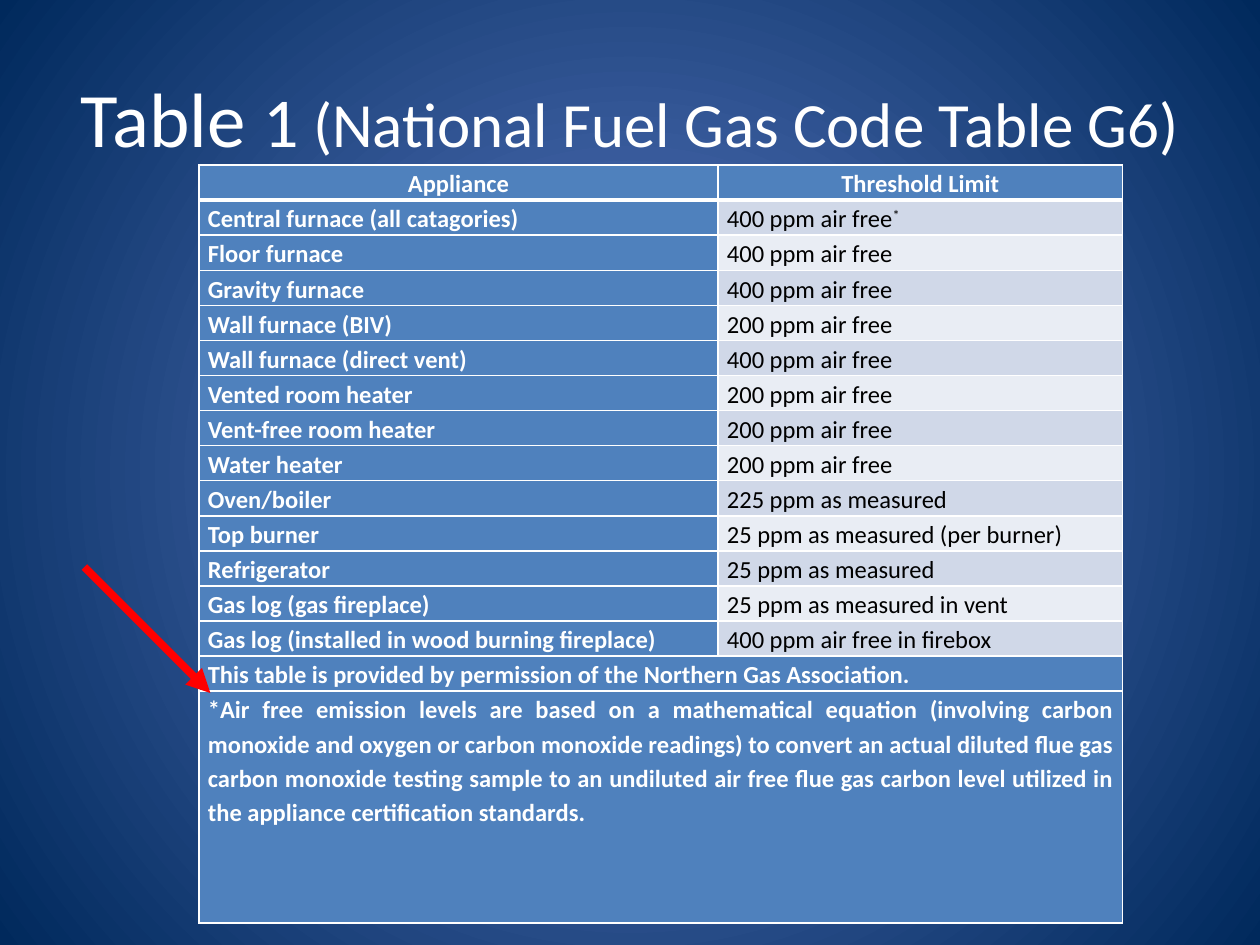
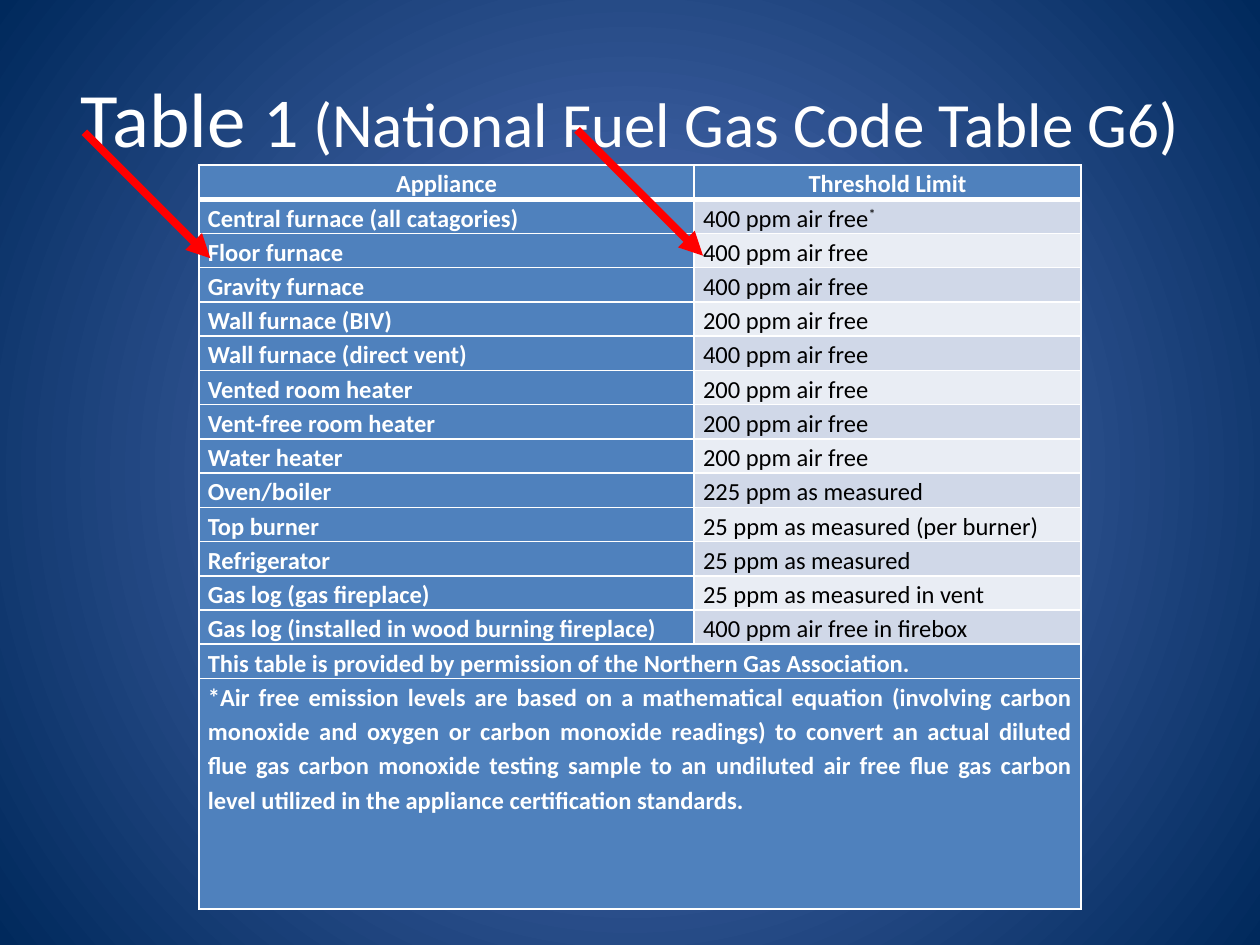
from dataclasses import dataclass

from lxml import etree
from pptx import Presentation
from pptx import util as u
from pptx.dml import color
from pptx.enum import shapes, text
from pptx.oxml import ns


@dataclass(frozen=True)
class Theme:
    font: str = "Calibri"
    white: str = "FFFFFF"
    black: str = "000000"
    glow: str = "5E7CC5"
    navy: str = "00295C"
    blue: str = "4F81BD"
    bands: tuple = ("D0D8E8", "E9EDF4")
    arrow: str = "FF0000"
    title_sizes: tuple = (44, 40, 36)
    table_size: int = 14
    arrow_width: float = 4.5
    border: int = 1
    header_border: int = 3


THEME = Theme()
ALIGN = text.PP_ALIGN
TITLE = ("Table ", "1", " (National Fuel Gas Code Table G6)")
HEADINGS = ("Appliance", "Threshold Limit")
LIMITS = (
    ("Central furnace (all catagories)", "400 ppm air free"),
    ("Floor furnace", "400 ppm air free"),
    ("Gravity furnace", "400 ppm air free"),
    ("Wall furnace (BIV)", "200 ppm air free"),
    ("Wall furnace (direct vent)", "400 ppm air free"),
    ("Vented room heater", "200 ppm air free"),
    ("Vent-free room heater", "200 ppm air free"),
    ("Water heater", "200 ppm air free"),
    ("Oven/boiler", "225 ppm as measured"),
    ("Top burner", "25 ppm as measured (per burner)"),
    ("Refrigerator", "25 ppm as measured"),
    ("Gas log (gas fireplace)", "25 ppm as measured in vent"),
    ("Gas log (installed in wood burning fireplace)", "400 ppm air free in firebox"),
)
NOTES = (
    "This table is provided by permission of the Northern Gas Association.",
    "*Air free emission levels are based on a mathematical equation (involving "
    "carbon monoxide and oxygen or carbon monoxide readings) to convert an actual "
    "diluted flue gas carbon monoxide testing sample to an undiluted air free flue "
    "gas carbon level utilized in the appliance certification standards.",
)


def rgb(value):
    return color.RGBColor.from_string(value)


def add_child(parent, tag, **attributes):
    return etree.SubElement(parent, ns.qn(tag), attributes)


def style_run(run, size, colour, bold=False):
    run.font.name = THEME.font
    run.font.size = u.Pt(size)
    run.font.bold = bold
    run.font.color.rgb = rgb(colour)


def set_background(slide):
    fill = slide.background.fill
    fill.gradient()
    for stop, colour in zip(fill.gradient_stops, (THEME.glow, THEME.navy)):
        stop.color.rgb = rgb(colour)
    fill.gradient_stops[0].position = 0
    fill.gradient_stops[1].position = 1
    gradient = next(slide.background._cSld.iter(ns.qn("a:gradFill")))
    gradient.remove(gradient.find(ns.qn("a:lin")))
    circle = add_child(gradient, "a:path", path="circle")
    add_child(circle, "a:fillToRect", l="50000", t="50000", r="50000", b="50000")


def add_title(slide):
    box = slide.shapes.add_textbox(u.Inches(0.5), u.Inches(0.3), u.Inches(9), u.Inches(1.25))
    frame = box.text_frame
    frame.word_wrap = True
    frame.vertical_anchor = text.MSO_ANCHOR.MIDDLE
    paragraph = frame.paragraphs[0]
    paragraph.alignment = ALIGN.CENTER
    for words, size in zip(TITLE, THEME.title_sizes):
        run = paragraph.add_run()
        run.text = words
        style_run(run, size, THEME.white)


def set_borders(cell, row):
    properties = cell._tc.get_or_add_tcPr()
    for side in "LRTB":
        under_header = (row, side) in ((0, "B"), (1, "T"))
        width = THEME.header_border if under_header else THEME.border
        line = add_child(properties, f"a:ln{side}", w=str(u.Pt(width)))
        add_child(add_child(line, "a:solidFill"), "a:srgbClr", val=THEME.white)


def style_cell(cell, row, fill):
    set_borders(cell, row)
    cell.fill.solid()
    cell.fill.fore_color.rgb = rgb(fill)
    cell.margin_left = cell.margin_right = u.Inches(0.07)
    cell.margin_top = cell.margin_bottom = 0


def fill_cell(cell, words, alignment, colour=THEME.white, bold=True):
    paragraph = cell.text_frame.paragraphs[0]
    paragraph.text = words
    paragraph.alignment = alignment
    paragraph.line_spacing = 1.15
    style_run(paragraph.runs[0], THEME.table_size, colour, bold)
    return paragraph


def add_footnote_mark(paragraph):
    run = paragraph.add_run()
    run.text = "*"
    style_run(run, THEME.table_size, THEME.black)
    run._r.get_or_add_rPr().set("baseline", "30000")


def add_limits_table(slide, column_widths, height, note_height):
    row_count = 1 + len(LIMITS) + len(NOTES)
    table = slide.shapes.add_table(
        row_count, 2, u.Inches(1.58), u.Inches(1.31),
        u.Inches(sum(column_widths)), u.Inches(height),
    ).table
    table.first_row = table.horz_banding = False
    for column, width in zip(table.columns, column_widths):
        column.width = u.Inches(width)
    for row in table.rows:
        row.height = u.Inches((height - note_height) / (row_count - 1))
    table.rows[row_count - 1].height = u.Inches(note_height)

    for column, heading in enumerate(HEADINGS):
        cell = table.cell(0, column)
        style_cell(cell, 0, THEME.blue)
        fill_cell(cell, heading, ALIGN.CENTER)
    for row, (appliance, limit) in enumerate(LIMITS, 1):
        name_cell, limit_cell = table.cell(row, 0), table.cell(row, 1)
        style_cell(name_cell, row, THEME.blue)
        fill_cell(name_cell, appliance, ALIGN.JUSTIFY)
        style_cell(limit_cell, row, THEME.bands[(row - 1) % 2])
        paragraph = fill_cell(limit_cell, limit, ALIGN.LEFT, THEME.black, False)
        if row == 1:
            add_footnote_mark(paragraph)
    for row, note in enumerate(NOTES, 1 + len(LIMITS)):
        first, last = table.cell(row, 0), table.cell(row, 1)
        first.merge(last)
        for cell in (first, last):
            style_cell(cell, row, THEME.blue)
        fill_cell(first, note, ALIGN.JUSTIFY).space_after = u.Pt(5)


def add_arrow(slide, left, top):
    arrow = slide.shapes.add_connector(
        shapes.MSO_CONNECTOR.STRAIGHT,
        u.Inches(left), u.Inches(top), u.Inches(left + 1), u.Inches(top + 1),
    )
    arrow.line.color.rgb = rgb(THEME.arrow)
    arrow.line.width = u.Pt(THEME.arrow_width)
    add_child(arrow.line._get_or_add_ln(), "a:tailEnd", type="triangle")
    add_child(arrow._element.spPr, "a:effectLst")


def add_limits_slide(presentation, column_widths, height, note_height, arrows):
    slide = presentation.slides.add_slide(presentation.slide_layouts[6])
    set_background(slide)
    add_title(slide)
    add_limits_table(slide, column_widths, height, note_height)
    for left, top in arrows:
        add_arrow(slide, left, top)


def main():
    presentation = Presentation()
    presentation.slide_width = u.Inches(10)
    presentation.slide_height = u.Inches(7.5)
    add_limits_slide(presentation, (4.12, 3.21), 6.02, 1.84, [(0.67, 4.5)])
    add_limits_slide(presentation, (3.93, 3.07), 5.91, 1.83, [(0.67, 1.05), (4.58, 1.03)])
    presentation.save("out.pptx")


if __name__ == "__main__":
    main()
